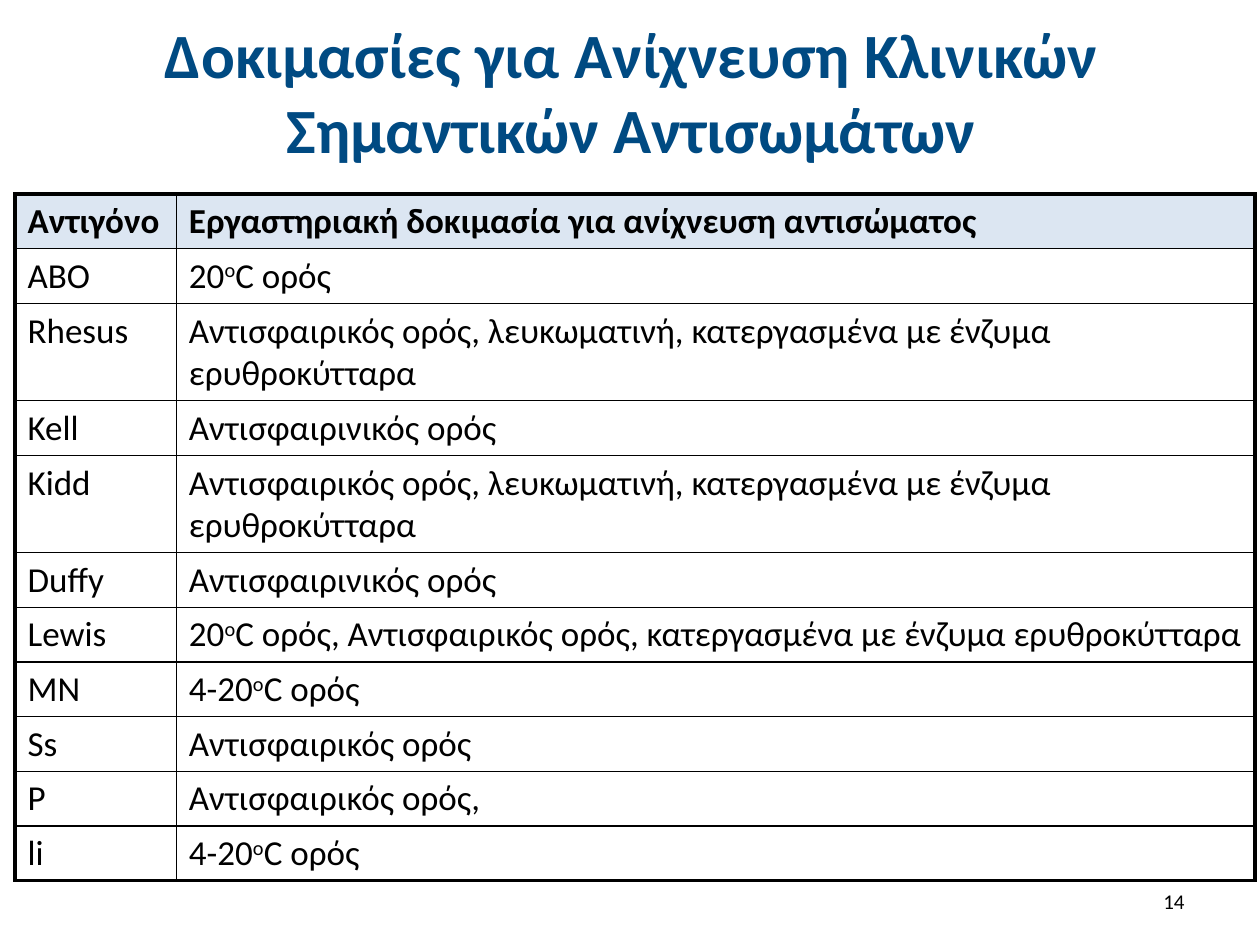
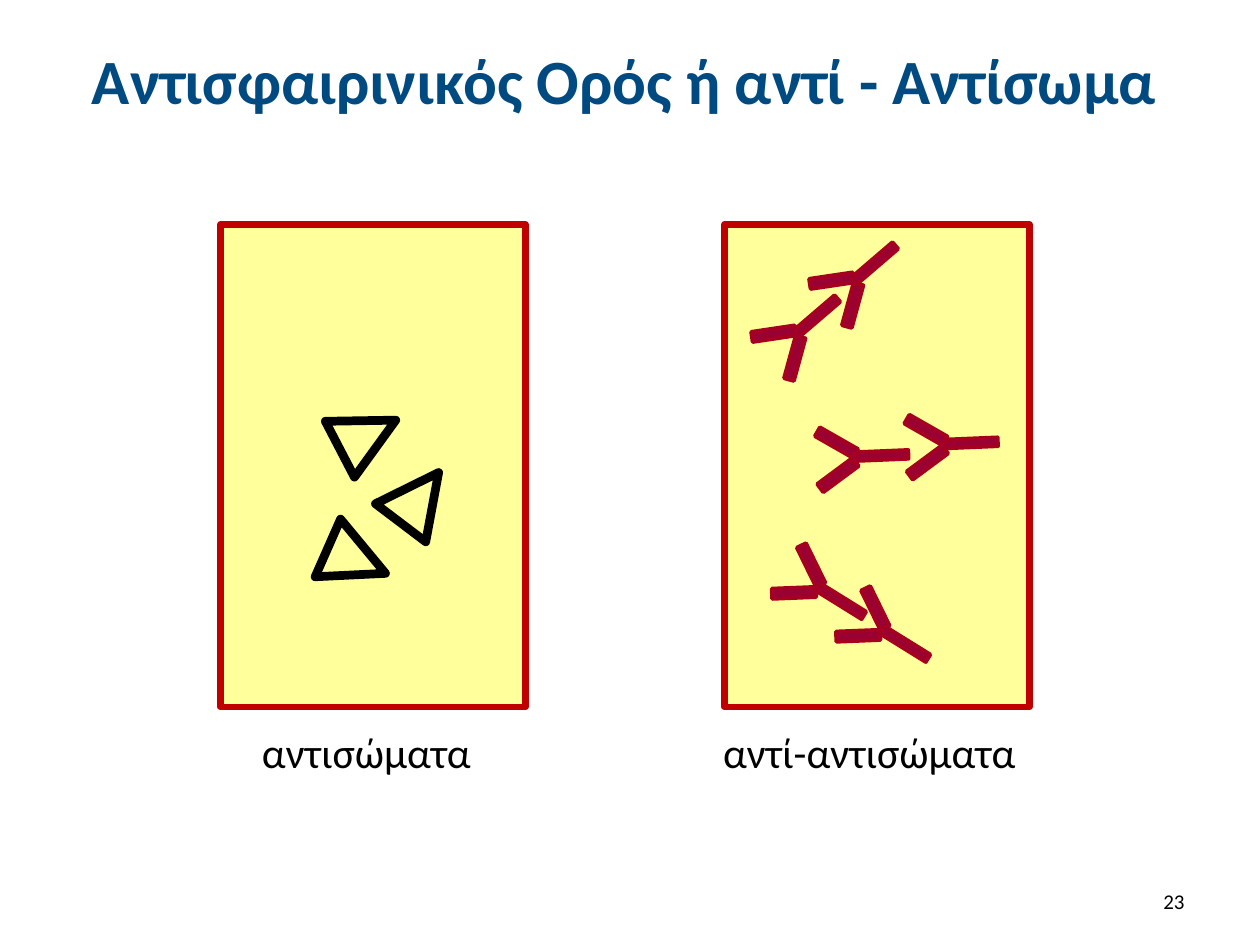
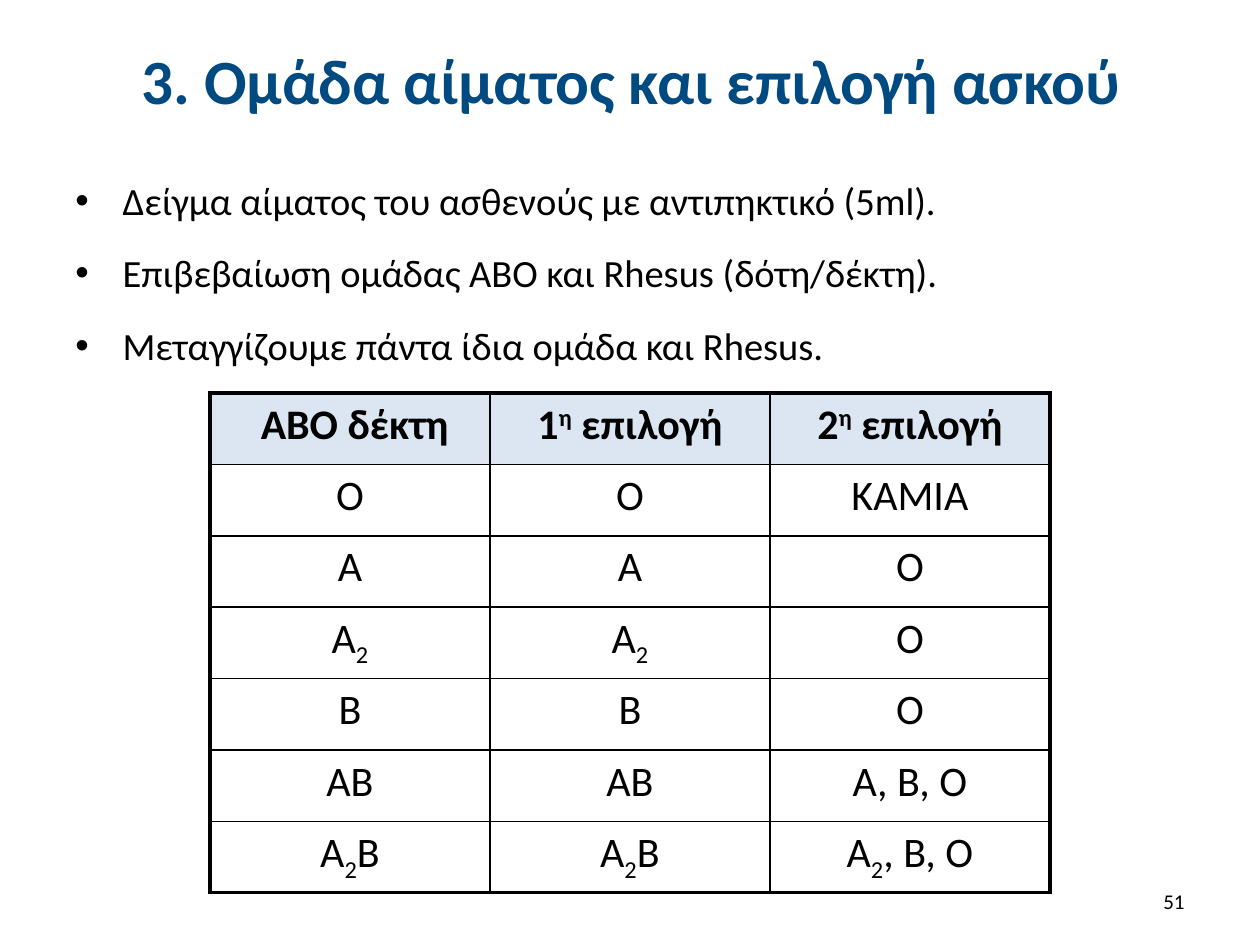
import math
from dataclasses import dataclass
from typing import NamedTuple

import pptx
import pptx.dml.color
import pptx.enum.shapes
import pptx.enum.text
import pptx.oxml
import pptx.oxml.ns
import pptx.util
from lxml import etree

Pt = pptx.util.Pt
RGBColor = pptx.dml.color.RGBColor
Align = pptx.enum.text.PP_ALIGN
Anchor = pptx.enum.text.MSO_ANCHOR
Preset = pptx.enum.shapes.MSO_SHAPE

# Shared style
FONT = "Calibri"
BLACK = RGBColor(0x00, 0x00, 0x00)
TITLE_BLUE = RGBColor(0x00, 0x4A, 0x82)
HEADER_BLUE = RGBColor(0xDC, 0xE6, 0xF2)
SERUM_YELLOW = RGBColor(0xFF, 0xFF, 0x9B)
FRAME_RED = RGBColor(0xC0, 0x00, 0x00)
ANTIBODY_FILL = RGBColor(0x99, 0x00, 0x33)
ANTIBODY_LINE = RGBColor(0xA5, 0x00, 0x21)
OUTER_BORDER, INNER_BORDER = 2.25, 1


class Run(NamedTuple):
    text: str
    baseline: int = 0


class Box(NamedTuple):
    left: float
    top: float
    width: float
    height: float

    def in_points(self):
        return tuple(Pt(length) for length in self)


class Style(NamedTuple):
    size: float
    color: RGBColor = BLACK
    bold: bool = False
    align: Align = Align.LEFT


@dataclass
class Grid:
    box: Box
    widths: list[float]
    heights: list[float]
    rows: list[tuple]
    size: float
    align: Align


class Bar(NamedTuple):
    """A bar of an antibody: offset from the stem, size and turn."""
    dx: float
    dy: float
    width: float
    height: float
    turn: float


class Antibody(NamedTuple):
    x: float
    y: float
    turn: float


class Antigen(NamedTuple):
    left: float
    top: float
    turn: float


class Caption(NamedTuple):
    text: str
    box: Box


SUP_O, SUP_ETA, SUB_2 = Run("o", 30), Run("η", 30), Run("2", -25)
TITLE_STYLE = Style(36, TITLE_BLUE, True, Align.CENTER)
NUMBER_STYLE = Style(12, align=Align.RIGHT)
NUMBER_BOX = Box(516.2, 500.4, 167.8, 28.8)


# Text
def write(paragraph, content: str | tuple, style: Style) -> None:
    paragraph.alignment = style.align
    for part in (content if type(content) is tuple else (content,)):
        part = part if isinstance(part, Run) else Run(part)
        run = paragraph.add_run()
        run.text = part.text
        run.font.name = FONT
        run.font.size = Pt(style.size)
        run.font.bold = style.bold
        run.font.color.rgb = style.color
        if part.baseline:
            run._r.get_or_add_rPr().set("baseline", str(part.baseline * 1000))


def add_text(slide, text: str, box: Box, style: Style, wrap: bool = True,
             anchor: Anchor = Anchor.TOP) -> None:
    frame = slide.shapes.add_textbox(*box.in_points()).text_frame
    frame.word_wrap = wrap
    frame.vertical_anchor = anchor
    write(frame.paragraphs[0], text, style)


def add_bullets(slide, lines: list[str], box: Box, style: Style) -> None:
    frame = slide.shapes.add_textbox(*box.in_points()).text_frame
    frame.word_wrap = True
    for index, line in enumerate(lines):
        paragraph = frame.add_paragraph() if index else frame.paragraphs[0]
        properties = paragraph._p.get_or_add_pPr()
        properties.set("marL", str(Pt(27)))
        properties.set("indent", str(-Pt(27)))
        for tag, name, value in (("a:buFont", "typeface", "Arial"), ("a:buChar", "char", "•")):
            etree.SubElement(properties, pptx.oxml.ns.qn(tag)).set(name, value)
        paragraph.line_spacing = 1.12
        paragraph.space_before = Pt(12 if index else 0)
        write(paragraph, line, style)


def start_slide(deck, title: str, number: int, title_height: float = 71.3):
    slide = deck.slides.add_slide(deck.slide_layouts[5])
    heading = slide.shapes.title
    box = Box(36.7, 9.4, 648, title_height).in_points()
    heading.left, heading.top, heading.width, heading.height = box
    frame = heading.text_frame
    frame.auto_size = pptx.enum.text.MSO_AUTO_SIZE.NONE
    frame.vertical_anchor = Anchor.MIDDLE
    write(frame.paragraphs[0], title, TITLE_STYLE)
    add_text(slide, str(number), NUMBER_BOX, NUMBER_STYLE, anchor=Anchor.MIDDLE)
    return slide


# Tables
def set_border(cell, side: str, width: float) -> None:
    cell._tc.get_or_add_tcPr().append(pptx.oxml.parse_xml(
        f'<a:ln{side} {pptx.oxml.ns.nsdecls("a")} w="{Pt(width)}">'
        f'<a:solidFill><a:srgbClr val="{BLACK}"/></a:solidFill></a:ln{side}>'))


def add_grid(slide, grid: Grid) -> None:
    last_row, last_column = len(grid.rows) - 1, len(grid.widths) - 1
    table = slide.shapes.add_table(last_row + 1, last_column + 1, *grid.box.in_points()).table
    table.first_row = table.horz_banding = False
    for column, width in zip(table.columns, grid.widths):
        column.width = Pt(width)
    for row, height in zip(table.rows, grid.heights):
        row.height = Pt(height)
    for r, contents in enumerate(grid.rows):
        for c, content in enumerate(contents):
            cell = table.cell(r, c)
            edges = {"L": c == 0, "R": c == last_column, "T": r == 0, "B": r == last_row}
            for side, outer in edges.items():
                set_border(cell, side, OUTER_BORDER if outer else INNER_BORDER)
            if r == 0:
                cell.fill.solid()
                cell.fill.fore_color.rgb = HEADER_BLUE
            else:
                cell.fill.background()
            write(cell.text_frame.paragraphs[0], content,
                  Style(grid.size, bold=r == 0, align=grid.align))


# Shapes
def add_figure(slide, preset: Preset, box: Box, fill: RGBColor | None,
               line: RGBColor, weight: float, turn: float = 0) -> None:
    figure = slide.shapes.add_shape(preset, *box.in_points())
    figure.shadow.inherit = False
    figure.rotation = turn
    if fill is None:
        figure.fill.background()
    else:
        figure.fill.solid()
        figure.fill.fore_color.rgb = fill
    figure.line.color.rgb = line
    figure.line.width = Pt(weight)


ANTIBODY_BARS = [
    Bar(0, 0, 5, 32.4, 0),
    Bar(-10.1, -24.5, 5.8, 25.2, -34.1),
    Bar(8.4, -24.5, 5.8, 25.2, 32.1),
]


def add_antibody(slide, antibody: Antibody) -> None:
    angle = math.radians(antibody.turn)
    cos, sin = math.cos(angle), math.sin(angle)
    for bar in ANTIBODY_BARS:
        x = antibody.x + bar.dx * cos - bar.dy * sin
        y = antibody.y + bar.dx * sin + bar.dy * cos
        box = Box(x - bar.width / 2, y - bar.height / 2, bar.width, bar.height)
        add_figure(slide, Preset.RECTANGLE, box, ANTIBODY_FILL, ANTIBODY_LINE, 2.25,
                   antibody.turn + bar.turn)


# Slide 1: antibody tests
ANTIGLOBULIN = "Αντισφαιρινικός ορός"
ENZYME_TEST = "Αντισφαιρικός ορός, λευκωματινή, κατεργασμένα με ένζυμα ερυθροκύτταρα"
COLD_SERUM = ("4-20", SUP_O, "C oρός")
ROW, TALL_ROW = 31.2, 55.6
ANTIBODY_TESTS = Grid(
    Box(8.6, 110.9, 708.5, 391), [92.2, 616.3],
    [TALL_ROW if r in (2, 4) else ROW for r in range(11)],
    [
        ("Αντιγόνο", "Εργαστηριακή δοκιμασία για ανίχνευση αντισώματος"),
        ("ΑΒΟ", ("20", SUP_O, "C oρός")),
        ("Rhesus", ENZYME_TEST),
        ("Kell", ANTIGLOBULIN),
        ("Kidd", ENZYME_TEST),
        ("Duffy", ANTIGLOBULIN),
        ("Lewis", ("20", SUP_O,
                   "C oρός, Αντισφαιρικός ορός, κατεργασμένα με ένζυμα ερυθροκύτταρα")),
        ("MN", COLD_SERUM),
        ("Ss", "Αντισφαιρικός ορός"),
        ("P", "Αντισφαιρικός ορός,"),
        ("li", COLD_SERUM),
    ], 20, Align.LEFT)


def build_tests(deck) -> None:
    slide = start_slide(deck, "Δοκιμασίες για Ανίχνευση Κλινικών Σημαντικών Αντισωμάτων", 14, 85)
    add_grid(slide, ANTIBODY_TESTS)


# Slide 2: antibodies and anti-antibodies
SERUM_LEFTS = (126, 414)
ANTIGENS = [Antigen(221.8, 266.4, 37.1), Antigen(192.2, 230.4, 62.5),
            Antigen(185.8, 302.4, 113.8)]
ANTIBODIES = [
    Antibody(466.2, 181.1, 229.4), Antibody(499.3, 150.8, 229.4),
    Antibody(502.9, 260.3, 267.6), Antibody(554, 253.1, 267.6),
    Antibody(479.9, 343.1, 301.8), Antibody(516.6, 367.6, 301.8),
]
CAPTIONS = [Caption("αντισώματα", Box(142.6, 411.8, 135.4, 36.4)),
            Caption("αντί-αντισώματα", Box(406.1, 411.8, 190.1, 36.4))]


def build_antiglobulin(deck) -> None:
    slide = start_slide(deck, "Αντισφαιρινικός Ορός ή αντί - Αντίσωμα ", 23)
    for left in SERUM_LEFTS:
        add_figure(slide, Preset.RECTANGLE, Box(left, 128.2, 174.2, 275.8),
                   SERUM_YELLOW, FRAME_RED, 3.75)
    for antigen in ANTIGENS:
        add_figure(slide, Preset.ISOSCELES_TRIANGLE, Box(antigen.left, antigen.top, 36, 36),
                   None, BLACK, 5, antigen.turn)
    for antibody in ANTIBODIES:
        add_antibody(slide, antibody)
    for caption in CAPTIONS:
        add_text(slide, caption.text, caption.box, Style(24), wrap=False)


# Slide 3: choice of blood unit
A2, A2B = ("Α", SUB_2), ("Α", SUB_2, "Β")
UNIT_CHOICES = Grid(
    Box(120, 224.6, 480, 285.6), [160] * 3, [40.8] * 7,
    [
        (" ABO δέκτη", ("1", SUP_ETA, " επιλογή"), ("2", SUP_ETA, " επιλογή")),
        ("Ο", "Ο", "ΚΑΜΙΑ"),
        ("Α", "Α", "Ο"),
        (A2, A2, "Ο"),
        ("Β", "Β", "Ο"),
        ("ΑΒ", "ΑΒ", "Α, Β, Ο"),
        (A2B, A2B, ("Α", SUB_2, ", Β, Ο")),
    ], 24, Align.CENTER)
SELECTION_STEPS = [
    "Δείγμα αίματος του ασθενούς με αντιπηκτικό (5ml).",
    "Επιβεβαίωση ομάδας ΑΒΟ και Rhesus (δότη/δέκτη).",
    "Μεταγγίζουμε πάντα ίδια ομάδα και Rhesus.",
]


def build_selection(deck) -> None:
    slide = start_slide(deck, "3. Ομάδα αίματος και επιλογή ασκού", 51)
    add_bullets(slide, SELECTION_STEPS, Box(36, 94.3, 648, 124.6), Style(22))
    add_grid(slide, UNIT_CHOICES)


def main() -> None:
    deck = pptx.Presentation()
    deck.slide_width, deck.slide_height = Pt(720), Pt(540)
    build_tests(deck)
    build_antiglobulin(deck)
    build_selection(deck)
    deck.save("out.pptx")


if __name__ == "__main__":
    main()
